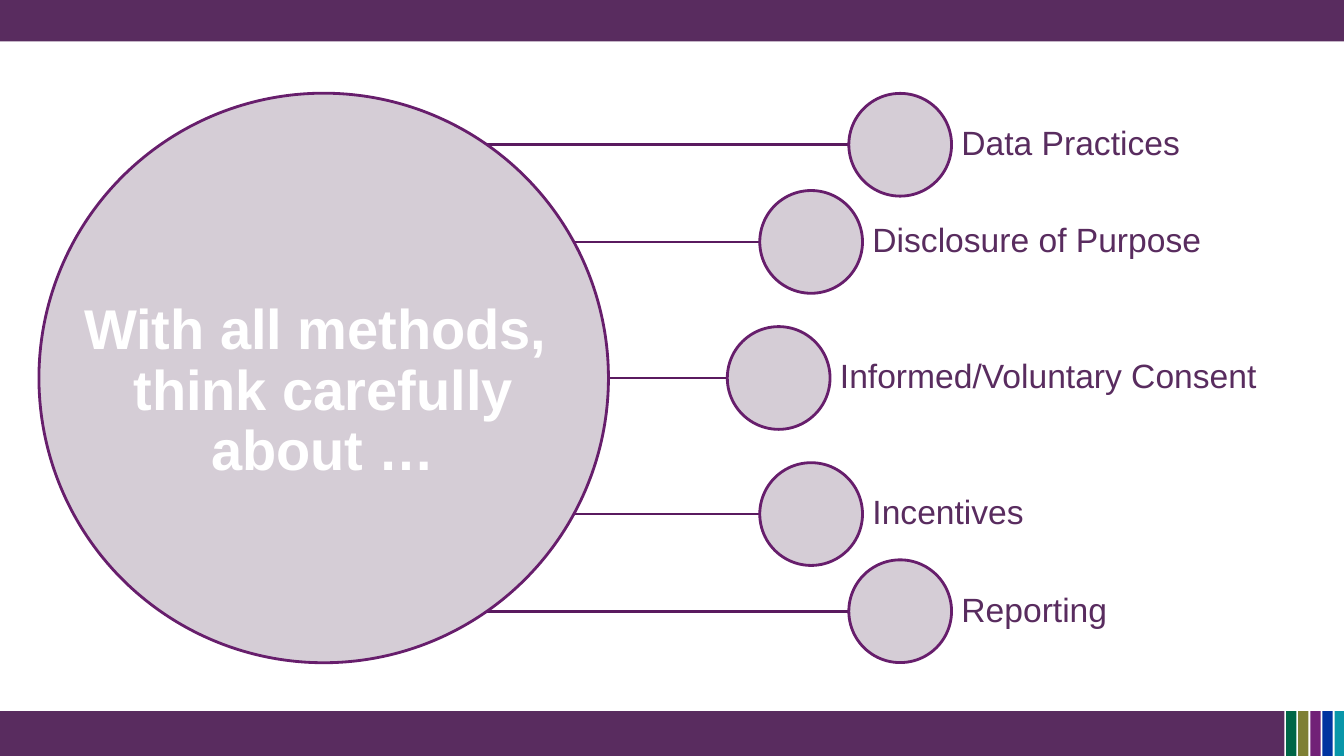
from pptx import Presentation
from pptx.dml.color import RGBColor
from pptx.enum.shapes import MSO_CONNECTOR, MSO_SHAPE
from pptx.enum.text import MSO_ANCHOR, MSO_AUTO_SIZE, PP_ALIGN
from pptx.oxml.ns import qn
from pptx.util import Pt
from lxml.etree import SubElement

PURPLE = RGBColor(0x59, 0x2C, 0x5F)
OUTLINE = RGBColor(0x67, 0x1E, 0x6C)
SPOKE = RGBColor(0x5A, 0x1A, 0x5F)
LILAC = RGBColor(0xD5, 0xCD, 0xD6)
WHITE = RGBColor(0xFF, 0xFF, 0xFF)
STRIPES = [
    RGBColor(0x00, 0x66, 0x47),
    RGBColor(0x7E, 0x80, 0x34),
    RGBColor(0x71, 0x21, 0x77),
    RGBColor(0x00, 0x33, 0xA0),
    RGBColor(0x09, 0x96, 0xA9),
]

HEADING = "With all methods, \nthink carefully about …"
TOPICS = [
    ("Data Practices", 643, -166.6, 252),
    ("Disclosure of Purpose", 579.4, -97.2, 316),
    ("Informed/Voluntary Consent", 556.2, 0, 315),
    ("Incentives", 579.4, 97.2, 181),
    ("Reporting", 643, 166.6, 175),
]

WIDTH, HEIGHT = 960, 540
TOP_BAR = 29.5
FOOTER_TOP, FOOTER_WIDTH = 508, 917.5
STRIPE_LEFT, STRIPE_PITCH, STRIPE_WIDTH = 918.7, 8.64, 7.3
HUB_X, HUB_Y, HUB_SIZE = 231.2, 270, 406.8
NODE_SIZE = 73.4
LABEL_INSET = 7.2


def add_bar(slide, left, top, width, height, color):
    bar = slide.shapes.add_shape(
        MSO_SHAPE.RECTANGLE, Pt(left), Pt(top), Pt(width), Pt(height))
    bar.shadow.inherit = False
    bar.fill.solid()
    bar.fill.fore_color.rgb = color
    bar.line.fill.background()


def add_spoke(slide, end_x, y):
    spoke = slide.shapes.add_connector(
        MSO_CONNECTOR.STRAIGHT, Pt(HUB_X), Pt(y), Pt(end_x), Pt(y))
    spoke.line.color.rgb = SPOKE
    spoke.line.width = Pt(2)
    SubElement(spoke.element.spPr, qn("a:effectLst"))


def add_circle(slide, x, y, size):
    circle = slide.shapes.add_shape(
        MSO_SHAPE.OVAL, Pt(x - size / 2), Pt(y - size / 2), Pt(size), Pt(size))
    circle.shadow.inherit = False
    circle.fill.solid()
    circle.fill.fore_color.rgb = LILAC
    circle.line.color.rgb = OUTLINE
    circle.line.width = Pt(2)


def set_text(frame, text, size, color, bold, align, inset):
    frame.text = text
    frame.word_wrap = True
    frame.auto_size = MSO_AUTO_SIZE.NONE
    frame.vertical_anchor = MSO_ANCHOR.MIDDLE
    frame.margin_left = frame.margin_right = Pt(inset)
    frame.margin_top = frame.margin_bottom = 0
    for paragraph in frame.paragraphs:
        paragraph.alignment = align
        paragraph.line_spacing = 0.9
        paragraph.space_before = Pt(0)
        for run in paragraph.runs:
            run.font.name = "Arial"
            run.font.size = Pt(size)
            run.font.bold = bold
            run.font.color.rgb = color


def main():
    deck = Presentation()
    deck.slide_width, deck.slide_height = Pt(WIDTH), Pt(HEIGHT)
    slide = deck.slides.add_slide(deck.slide_layouts[5])

    add_bar(slide, 0, FOOTER_TOP, FOOTER_WIDTH, HEIGHT - FOOTER_TOP, PURPLE)
    for index, color in enumerate(STRIPES):
        add_bar(slide, STRIPE_LEFT + index * STRIPE_PITCH, FOOTER_TOP,
                STRIPE_WIDTH, HEIGHT - FOOTER_TOP, color)
    add_bar(slide, 0, 0, WIDTH, TOP_BAR, PURPLE)

    for _, node_x, offset, _ in TOPICS:
        add_spoke(slide, node_x, HUB_Y + offset)
    add_circle(slide, HUB_X, HUB_Y, HUB_SIZE)

    heading = slide.shapes.title
    heading.left, heading.top = Pt(53.3), Pt(185)
    heading.width, heading.height = Pt(355), Pt(190)
    set_text(heading.text_frame, HEADING, 40, WHITE, True, PP_ALIGN.CENTER, 0)
    heading.element.getparent().append(heading.element)

    for topic, node_x, offset, label_width in TOPICS:
        node_y = HUB_Y + offset
        add_circle(slide, node_x, node_y, NODE_SIZE)
        label = slide.shapes.add_textbox(
            Pt(node_x + NODE_SIZE / 2), Pt(node_y - NODE_SIZE / 2),
            Pt(label_width), Pt(NODE_SIZE))
        set_text(label.text_frame, topic, 24, PURPLE, False,
                 PP_ALIGN.LEFT, LABEL_INSET)

    deck.save("out.pptx")


if __name__ == "__main__":
    main()
